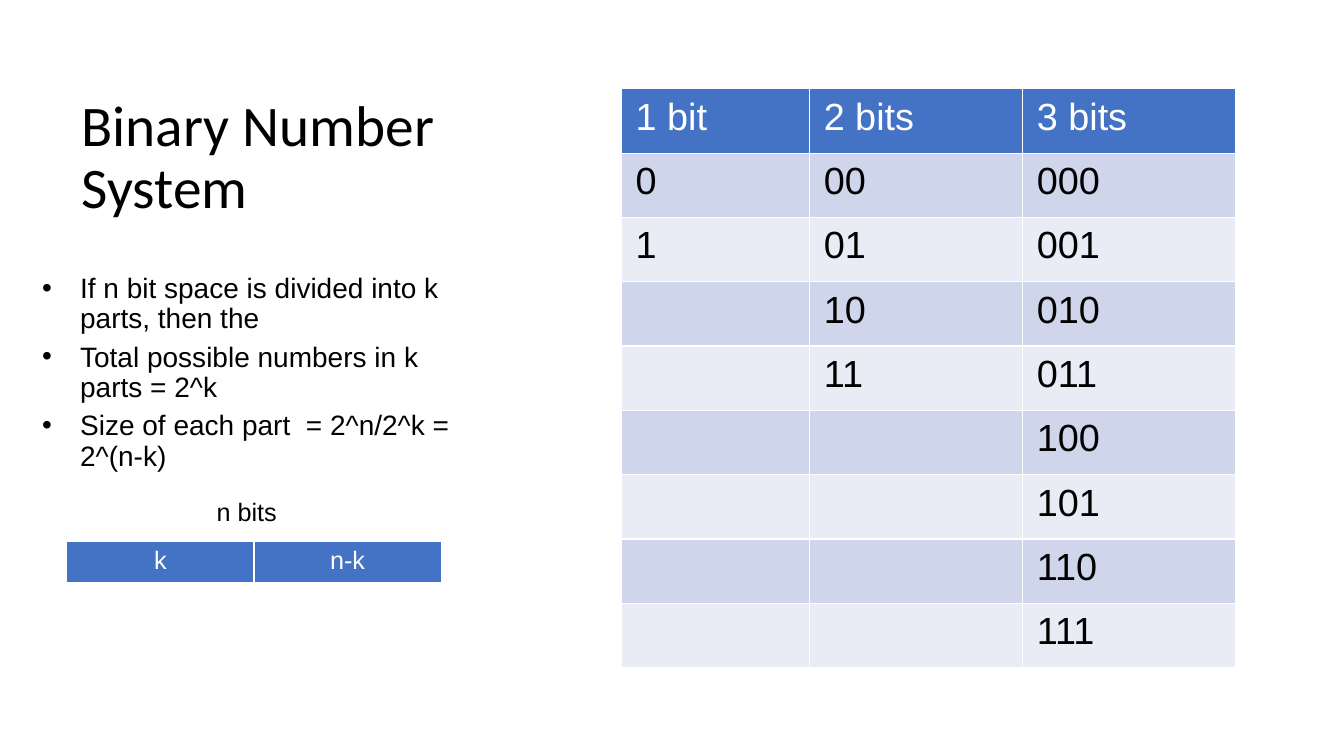
import pptx
import pptx.dml.color
import pptx.enum.text
import pptx.oxml.ns
import pptx.util
from lxml import etree

Cm = pptx.util.Cm
Pt = pptx.util.Pt
RGBColor = pptx.dml.color.RGBColor
ALIGN = pptx.enum.text.PP_ALIGN
ANCHOR = pptx.enum.text.MSO_ANCHOR

BLACK = RGBColor(0x00, 0x00, 0x00)
WHITE = RGBColor(0xFF, 0xFF, 0xFF)
BLUE = RGBColor(0x44, 0x72, 0xC4)
BAND_DARK = RGBColor(0xCF, 0xD5, 0xEA)
BAND_LIGHT = RGBColor(0xE9, 0xEB, 0xF5)


def write(paragraph, text, size, font="Arial", color=BLACK, align=ALIGN.LEFT, spacing=1.0):
    paragraph.alignment = align
    paragraph.line_spacing = spacing
    run = paragraph.add_run()
    run.text = text
    run.font.name = font
    run.font.size = Pt(size)
    run.font.bold = False
    run.font.color.rgb = color


def fill_cell(cell, color):
    cell.fill.solid()
    cell.fill.fore_color.rgb = color


presentation = pptx.Presentation()
presentation.slide_width = Cm(33.87)
presentation.slide_height = Cm(19.05)
slide = presentation.slides.add_slide(presentation.slide_layouts[5])

# Title
title = slide.shapes.title
title.left, title.top, title.width, title.height = Cm(1.8), Cm(1.75), Cm(9.73), Cm(4.5)
title.text_frame.word_wrap = True
title.text_frame.auto_size = pptx.enum.text.MSO_AUTO_SIZE.NONE
title.text_frame.vertical_anchor = ANCHOR.MIDDLE
write(title.text_frame.paragraphs[0], "Binary Number System", 41, font="Calibri", spacing=0.9)

# Rules for splitting the bit space
rules = [
    "If n bit space is divided into k parts, then the",
    "Total possible numbers in k parts = 2^k",
    "Size of each part  = 2^n/2^k = 2^(n-k)",
]
rules_frame = slide.shapes.add_textbox(Cm(0.81), Cm(6.78), Cm(11.15), Cm(10.52)).text_frame
rules_frame.word_wrap = True
for index, rule in enumerate(rules):
    paragraph = rules_frame.add_paragraph() if index else rules_frame.paragraphs[0]
    write(paragraph, rule, 20, spacing=0.9)
    paragraph.space_after = Pt(6)
    properties = paragraph._p.get_or_add_pPr()
    properties.set("marL", str(Cm(0.96)))
    properties.set("indent", str(-Cm(0.96)))
    etree.SubElement(properties, pptx.oxml.ns.qn("a:buFont"), typeface="Arial")
    etree.SubElement(properties, pptx.oxml.ns.qn("a:buChar"), char="•")

# Every number that 1, 2 and 3 bits can hold
bit_counts = [1, 2, 3]
column_widths = [Cm(4.74), Cm(5.37), Cm(5.37)]
row_count = 1 + 2 ** max(bit_counts)
row_height = Cm(1.62)
numbers = slide.shapes.add_table(
    row_count, len(bit_counts), Cm(15.65), Cm(2.24), sum(column_widths), row_height * row_count
).table
for row in numbers.rows:
    row.height = row_height
for column, bits in enumerate(bit_counts):
    numbers.columns[column].width = column_widths[column]
    heading = "1 bit" if bits == 1 else f"{bits} bits"
    entries = [heading] + [f"{value:0{bits}b}" for value in range(2 ** bits)]
    for row in range(row_count):
        cell = numbers.cell(row, column)
        cell.margin_left = cell.margin_right = Cm(0.37)
        cell.margin_top = cell.margin_bottom = Cm(0.18)
        fill_cell(cell, BLUE if row == 0 else BAND_DARK if row % 2 else BAND_LIGHT)
        if row < len(entries):
            write(cell.text_frame.paragraphs[0], entries[row], 27, color=BLACK if row else WHITE)

# The n bits split into k and n-k
split = slide.shapes.add_table(1, 2, Cm(1.68), Cm(13.64), Cm(9.44), Cm(1.03)).table
for cell, part in zip(split.rows[0].cells, ["k", "n-k"]):
    fill_cell(cell, BLUE)
    write(cell.text_frame.paragraphs[0], part, 18, color=WHITE, align=ALIGN.CENTER)

split_label = slide.shapes.add_textbox(Cm(5.03), Cm(12.37), Cm(4.11), Cm(1.03)).text_frame
split_label.word_wrap = True
split_label.margin_left = Cm(0.43)
write(split_label.paragraphs[0], "n bits", 18)

presentation.save("out.pptx")
